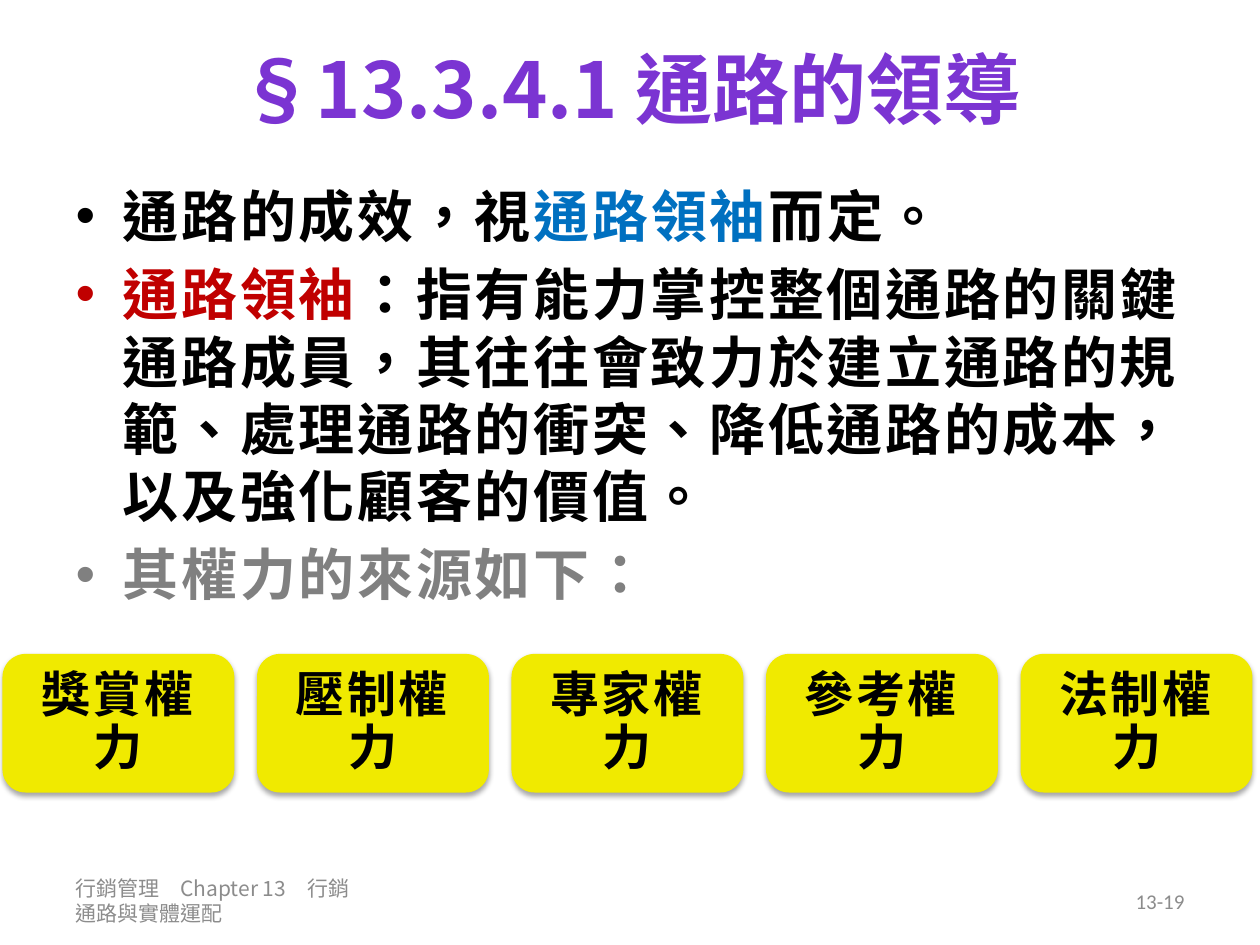
from lxml import etree
from pptx import Presentation
from pptx.dml.color import RGBColor
from pptx.enum.shapes import MSO_SHAPE as SHAPE
from pptx.enum.text import MSO_ANCHOR as ANCHOR, PP_ALIGN as ALIGN
from pptx.oxml import parse_xml
from pptx.oxml.ns import nsdecls, qn
from pptx.util import Inches, Pt

COLORS = {"title": "7B34D2", "black": "000000", "blue": "0070C0", "red": "C00000",
          "gray": "808080", "footer": "8C8C8C", "tile": "F0EA00"}
CJK = "Noto Sans CJK SC"


def add_run(p, text, size, color, font="Calibri", bold=True, spacing=0):
    r = p.add_run()
    r.text = text
    r.font.size, r.font.bold, r.font.name = Pt(size), bold, font
    r.font.color.rgb = RGBColor.from_string(COLORS[color])
    rPr = r.font._element
    rPr.set("lang", "zh-TW")
    if spacing:
        rPr.set("spc", str(int(spacing * 100)))
    ea = etree.Element(qn("a:ea"), typeface=CJK)
    rPr.find(qn("a:latin")).addnext(ea)


def place(sp, left, top, width, height):
    sp.left, sp.top = Inches(left), Inches(top)
    sp.width, sp.height = Inches(width), Inches(height)


prs = Presentation()
prs.slide_width, prs.slide_height = Inches(10), Inches(7.5)
s = prs.slides.add_slide(prs.slide_layouts[1])
MARGIN, TITLE_H = 0.5, 1.39
CONTENT_W = 10 - 2 * MARGIN

# Title
title = s.shapes.title
place(title, MARGIN, 0, CONTENT_W, TITLE_H)
title.text_frame.vertical_anchor = ANCHOR.MIDDLE
p = title.text_frame.paragraphs[0]
p.alignment = ALIGN.CENTER
add_run(p, "§13.3.4.1 通路的領導", 44, "title", CJK)

# Bulleted list
body = s.placeholders[1]
place(body, MARGIN, TITLE_H, CONTENT_W, 4.09)
bullets = [
    [("通路的成效，視", "black"), ("通路領袖", "blue"), ("而定。", "black")],
    [("通路領袖", "red"),
     ("：指有能力掌控整個通路的關鍵通路成員，其往往會致力於建立通路的規範、"
      "處理通路的衝突、降低通路的成本，以及強化顧客的價值。", "black")],
    [("其權力的來源如下：", "gray")],
]
tf = body.text_frame
for i, runs in enumerate(bullets):
    p = tf.add_paragraph() if i else tf.paragraphs[0]
    p.space_before = Pt(6.4 if i else 0)
    for text, color in runs:
        add_run(p, text, 32, color, spacing=1.5)

# Footer and slide number
footers = [(MARGIN, 2.45, "行銷管理　Chapter 13　行銷通路與實體運配", CJK, ALIGN.LEFT),
           (7.17, 2.33, "13-19", "Calibri", ALIGN.RIGHT)]
for left, width, text, font, align in footers:
    sp = s.shapes.add_textbox(Inches(left), Inches(6.95), Inches(width), Inches(0.4))
    tf = sp.text_frame
    tf.word_wrap, tf.vertical_anchor = True, ANCHOR.MIDDLE
    p = tf.paragraphs[0]
    p.alignment = align
    add_run(p, text, 12, "footer", font, bold=False)

# Row of power sources
TILE_W, TILE_H, PITCH = 1.84, 1.1, 2.02
powers = ["獎賞權力", "壓制權力", "專家權力", "參考權力", "法制權力"]
for i, power in enumerate(powers):
    sp = s.shapes.add_shape(SHAPE.ROUNDED_RECTANGLE, Inches(0.02 + i * PITCH),
                            Inches(5.19), Inches(TILE_W), Inches(TILE_H))
    sp.fill.solid()
    sp.fill.fore_color.rgb = RGBColor.from_string(COLORS["tile"])
    sp.line.fill.background()
    sp.shadow.inherit = False
    sp._element.spPr.find(qn("a:effectLst")).append(parse_xml(
        f'<a:outerShdw {nsdecls("a")} blurRad="{Pt(3.1)}" dist="{Pt(1.8)}" dir="5400000" '
        'rotWithShape="0"><a:srgbClr val="000000"><a:alpha val="35000"/></a:srgbClr>'
        '</a:outerShdw>'))
    tf = sp.text_frame
    tf.word_wrap, tf.vertical_anchor = True, ANCHOR.MIDDLE
    tf.margin_left = tf.margin_right = tf.margin_top = tf.margin_bottom = Inches(0.17)
    p = tf.paragraphs[0]
    p.alignment, p.line_spacing, p.space_after = ALIGN.CENTER, 0.9, Pt(9.8)
    add_run(p, power, 28, "black", spacing=1.5)

prs.save("out.pptx")
